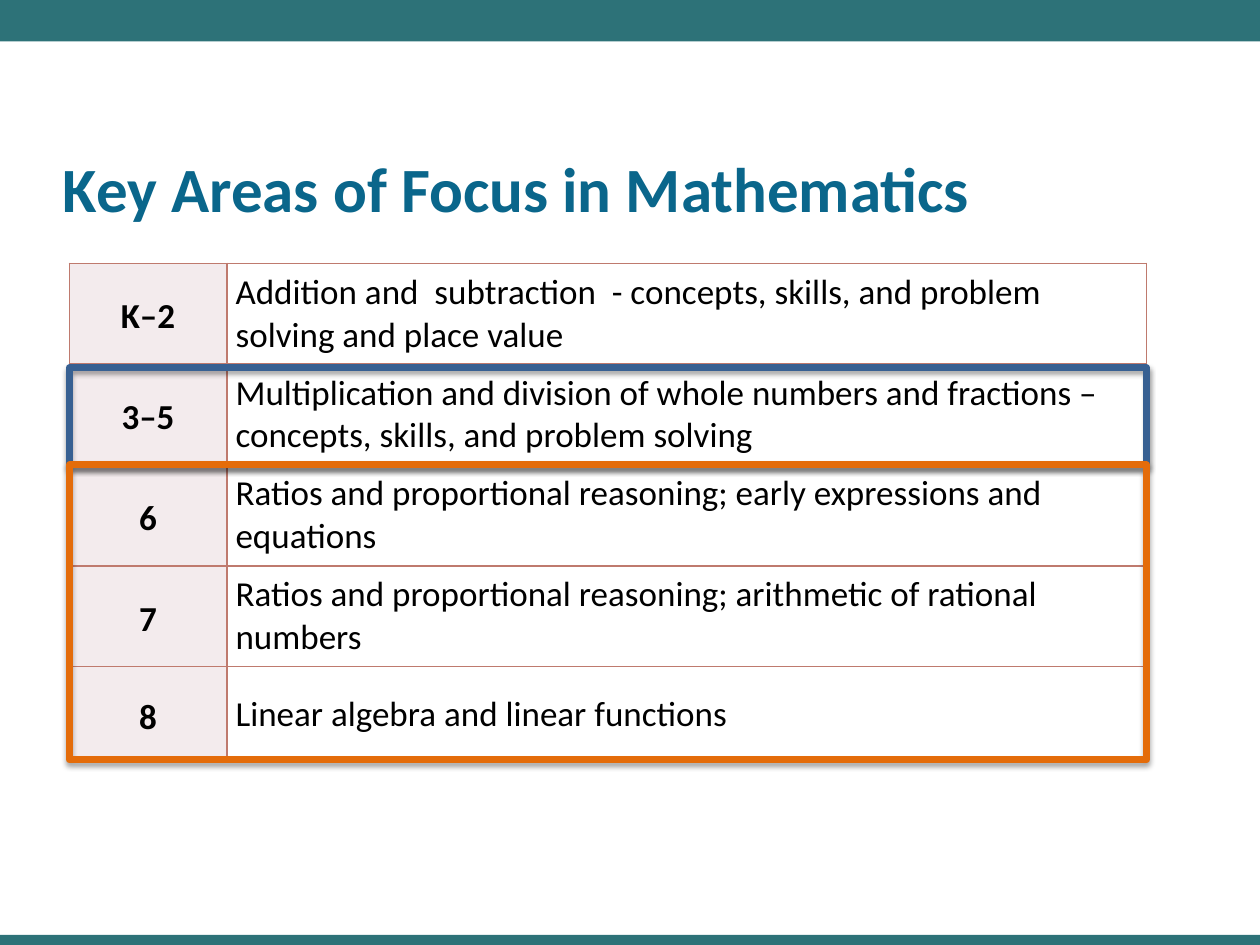
from dataclasses import dataclass

from lxml import etree
from pptx import Presentation
from pptx.dml.color import RGBColor
from pptx.enum.shapes import MSO_SHAPE
from pptx.enum.text import MSO_ANCHOR, PP_ALIGN
from pptx.oxml import parse_xml
from pptx.oxml.ns import nsdecls, qn
from pptx.util import Inches, Pt

RECTANGLE = MSO_SHAPE.RECTANGLE
TOP, MIDDLE = MSO_ANCHOR.TOP, MSO_ANCHOR.MIDDLE
LEFT, CENTER = PP_ALIGN.LEFT, PP_ALIGN.CENTER

GRID_COLUMNS, GRID_ROWS = 100, 75
SLIDE_WIDTH, SLIDE_HEIGHT = Inches(10), Inches(7.5)

FOCUS_AREAS = [
    ("K–2", "Addition and  subtraction  - concepts, skills, and problem solving and place value"),
    ("3–5", "Multiplication and division of whole numbers and fractions – "
            "concepts, skills, and problem solving"),
    ("6", "Ratios and proportional reasoning; early expressions and equations"),
    ("7", "Ratios and proportional reasoning; arithmetic of rational numbers"),
    ("8", "Linear algebra and linear functions"),
]


@dataclass(frozen=True)
class Theme:
    font: str = "Calibri"
    title_size: int = 36
    body_size: int = 20
    band: str = "2D7278"
    title: str = "0A668B"
    text: str = "000000"
    grade_fill: str = "F3EBED"
    border: str = "BF7A6E"
    elementary: str = "376092"
    middle_school: str = "E46C0A"


def columns(count):
    return round(SLIDE_WIDTH * count / GRID_COLUMNS)


def rows(count):
    return round(SLIDE_HEIGHT * count / GRID_ROWS)


def place(left, top, width, height):
    return columns(left), rows(top), columns(width), rows(height)


class SlideBuilder:
    """Draws on one page; lengths are grid columns and rows."""

    def __init__(self, page, theme):
        self.page = page
        self.theme = theme

    def set_text(self, para, text, size, color, bold=False):
        para.text = text
        font = para.font
        font.name, font.size, font.bold = self.theme.font, Pt(size), bold
        font.color.rgb = RGBColor.from_string(color)

    def rectangle(self, area):
        box = self.page.shapes.add_shape(RECTANGLE, *place(*area))
        box.shadow.inherit = False
        return box

    def band(self, *area):
        box = self.rectangle(area)
        box.fill.solid()
        box.fill.fore_color.rgb = RGBColor.from_string(self.theme.band)
        box.line.fill.background()

    def title(self, text, *area):
        box = self.page.shapes.add_textbox(*place(*area))
        frame = box.text_frame
        frame.word_wrap = True
        frame.vertical_anchor = TOP
        frame.margin_left = frame.margin_top = frame.margin_right = frame.margin_bottom = 0
        self.set_text(frame.paragraphs[0], text, self.theme.title_size, self.theme.title,
                      bold=True)

    def highlight(self, color, *area):
        """Open frame with a soft shadow below it."""
        box = self.rectangle(area)
        box.fill.background()
        box.line.color.rgb = RGBColor.from_string(color)
        box.line.width = Pt(4)
        effects = box._element.spPr.find(qn("a:effectLst"))
        shadow = etree.SubElement(effects, qn("a:outerShdw"), blurRad=str(Pt(3.1)),
                                  dist=str(Pt(1.8)), dir="5400000", rotWithShape="0")
        shade = etree.SubElement(shadow, qn("a:srgbClr"), val="000000")
        etree.SubElement(shade, qn("a:alpha"), val="35000")

    def cell_borders(self, cell):
        properties = cell._tc.get_or_add_tcPr()
        for index, side in enumerate(("lnL", "lnR", "lnT", "lnB")):
            properties.insert(index, parse_xml(
                f'<a:{side} {nsdecls("a")} w="{Pt(1)}"><a:solidFill>'
                f'<a:srgbClr val="{self.theme.border}"/></a:solidFill></a:{side}>'))

    def cell(self, cell, text, is_grade):
        cell.margin_left = cell.margin_right = Inches(0.07)
        cell.margin_top = cell.margin_bottom = 0
        cell.vertical_anchor = MIDDLE
        para = cell.text_frame.paragraphs[0]
        para.alignment = CENTER if is_grade else LEFT
        if is_grade:
            para.line_spacing = 1.15
            cell.fill.solid()
            cell.fill.fore_color.rgb = RGBColor.from_string(self.theme.grade_fill)
        else:
            cell.fill.background()
        self.set_text(para, text, self.theme.body_size, self.theme.text, bold=is_grade)
        self.cell_borders(cell)

    def table(self, entries, left, top, widths, heights):
        area = place(left, top, sum(widths), sum(heights))
        table = self.page.shapes.add_table(len(entries), len(widths), *area).table
        table.first_row = table.horz_banding = False
        for column, width in zip(table.columns, widths):
            column.width = columns(width)
        for row, height, entry in zip(table.rows, heights, entries):
            row.height = rows(height)
            for index, text in enumerate(entry):
                self.cell(row.cells[index], text, is_grade=index == 0)


def main():
    deck = Presentation()
    deck.slide_width, deck.slide_height = SLIDE_WIDTH, SLIDE_HEIGHT
    theme = Theme()
    builder = SlideBuilder(deck.slides.add_slide(deck.slide_layouts[6]), theme)

    builder.band(0, 0, GRID_COLUMNS, 3.3)
    builder.band(0, 74.2, GRID_COLUMNS, 0.8)
    builder.title("Key Areas of Focus in Mathematics", 5, 11.9, 90, 9)

    left, width = 5.5, 85.5
    builder.table(FOCUS_AREAS, left, 20.9, widths=[12.5, 73], heights=[8, 8, 8, 8, 7.6])
    builder.highlight(theme.elementary, left, 29.2, width, 7.7)
    builder.highlight(theme.middle_school, left, 36.9, width, 23.4)

    deck.save("out.pptx")


if __name__ == "__main__":
    main()
